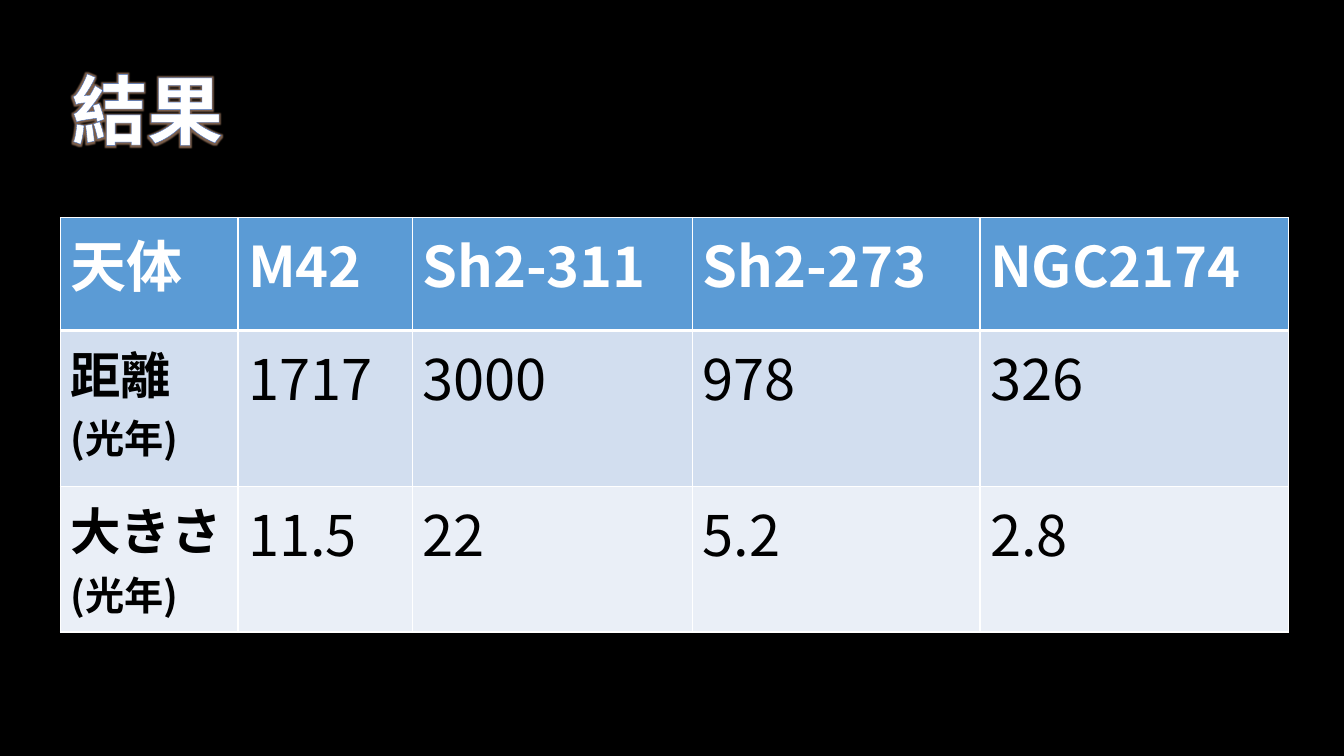
from lxml import etree
from pptx import Presentation
from pptx.dml.color import RGBColor
from pptx.enum.text import MSO_ANCHOR, MSO_AUTO_SIZE, PP_ALIGN
from pptx.oxml import parse_xml
from pptx.oxml.ns import nsdecls, qn
from pptx.util import Inches, Pt

CENTER = PP_ALIGN.CENTER
TOP = MSO_ANCHOR.TOP
MIDDLE = MSO_ANCHOR.MIDDLE
GROW = MSO_AUTO_SIZE.SHAPE_TO_FIT_TEXT
TITLE_ONLY = 5
CJK = "Noto Sans CJK JP"
WHITE, BLACK = "FFFFFF", "000000"
ROW_FILLS = ["5B9BD5", "D2DEEF", "EAEFF7"]
COL_WIDTHS = [1.76, 1.73, 2.78, 2.85, 3.06]
ROW_HEIGHTS = [1.12, 1.55, 1.44]
ROWS = [
    ["天体", "M42", "Sh2-311", "Sh2-273", "NGC2174"],
    ["距離", "1717", "3000", "978", "326"],
    ["大きさ", "11.5", "22", "5.2", "2.8"],
]
UNIT = "(光年)"


def rgb(value):
    """Turn a hex string into a colour."""
    return RGBColor.from_string(value)


def add_run(p, text, size, color, bold, font=CJK):
    """Append one formatted run to a paragraph."""
    r = p.add_run()
    r.text = text
    r.font.size = Pt(size)
    r.font.bold = bold
    r.font.color.rgb = rgb(color)
    r.font.name = font
    etree.SubElement(r.font._element, qn("a:ea"), typeface=CJK)
    return r


def add_text_effects(r, line, width, glow, radius):
    """Give a run an outline and a soft glow."""
    rPr = r.font._element
    rPr.insert(0, parse_xml(
        f'<a:ln {nsdecls("a")} w="{Pt(width)}"><a:solidFill>'
        f'<a:srgbClr val="{line}"/></a:solidFill></a:ln>'))
    rPr.find(qn("a:solidFill")).addnext(parse_xml(
        f'<a:effectLst {nsdecls("a")}><a:glow rad="{Pt(radius)}">'
        f'<a:srgbClr val="{glow}"><a:alpha val="60000"/></a:srgbClr>'
        f'</a:glow></a:effectLst>'))


def set_borders(cell, top, bottom):
    """Draw white borders, 1 pt at the sides."""
    tcPr = cell._tc.get_or_add_tcPr()
    sides = [("L", 1), ("R", 1), ("T", top), ("B", bottom)]
    for i, (side, width) in enumerate(sides):
        tcPr.insert(i, parse_xml(
            f'<a:ln{side} {nsdecls("a")} w="{Pt(width)}"><a:solidFill>'
            f'<a:srgbClr val="{WHITE}"/></a:solidFill></a:ln{side}>'))


def add_title(s, text):
    """Place and format the title."""
    sp = s.shapes.title
    sp.left, sp.top = Inches(0.6), Inches(0.57)
    sp.width, sp.height = Inches(1.72), Inches(1.01)
    tf = sp.text_frame
    tf.word_wrap = False
    tf.auto_size = GROW
    tf.vertical_anchor = MIDDLE
    p = tf.paragraphs[0]
    p.alignment = CENTER
    p.line_spacing = 1.0
    r = add_run(p, text, 54, WHITE, True, "Calibri")
    add_text_effects(r, "4472C4", 0.8, "D0A080", 4)


def fill_cell(cell, text, row, col):
    """Write and style one cell of the results table."""
    header, label = row == 0, row > 0 and col == 0
    cell.fill.solid()
    cell.fill.fore_color.rgb = rgb(ROW_FILLS[row])
    cell.vertical_anchor = TOP
    set_borders(cell, 3 if row == 1 else 1, 3 if header else 1)
    tf = cell.text_frame
    add_run(tf.paragraphs[0], text, 36 if label else 40,
            WHITE if header else BLACK, header or label)
    if label:
        add_run(tf.add_paragraph(), UNIT, 28, BLACK, True)


def add_results(s):
    """Add the table of distances and sizes."""
    table = s.shapes.add_table(
        len(ROWS), len(COL_WIDTHS), Inches(0.6), Inches(2.16),
        Inches(sum(COL_WIDTHS)), Inches(sum(ROW_HEIGHTS))).table
    for column, width in zip(table.columns, COL_WIDTHS):
        column.width = Inches(width)
    for i, height in enumerate(ROW_HEIGHTS):
        table.rows[i].height = Inches(height)
        for j, text in enumerate(ROWS[i]):
            fill_cell(table.cell(i, j), text, i, j)


def main():
    """Build the slide and save it."""
    prs = Presentation()
    prs.slide_width, prs.slide_height = Inches(13.33), Inches(7.5)
    s = prs.slides.add_slide(prs.slide_layouts[TITLE_ONLY])
    s.background.fill.solid()
    s.background.fill.fore_color.rgb = rgb(BLACK)
    add_results(s)
    add_title(s, "結果")
    prs.save("out.pptx")


if __name__ == "__main__":
    main()
